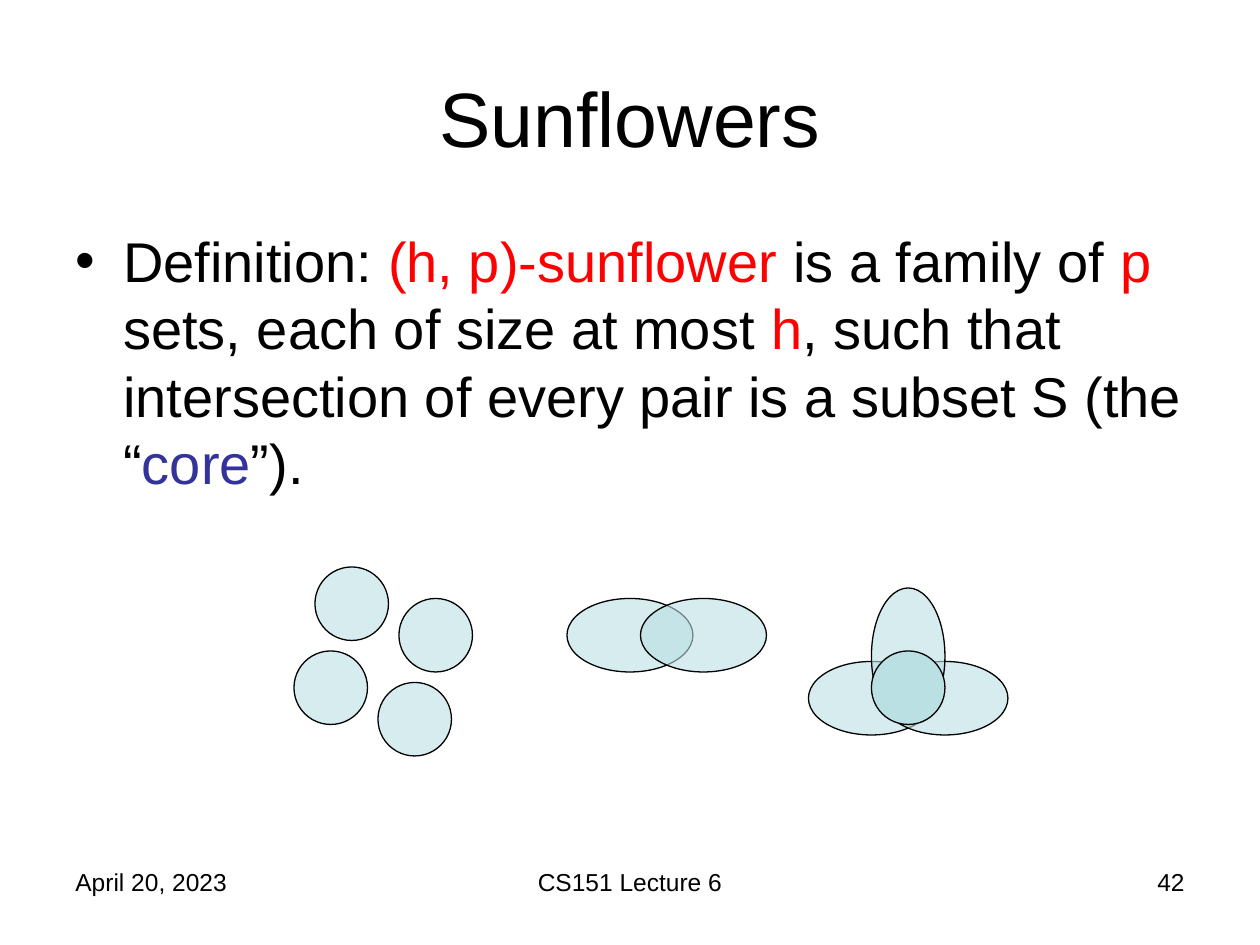
from lxml import etree
from pptx import Presentation
from pptx.dml.color import RGBColor
from pptx.enum.shapes import MSO_SHAPE
from pptx.enum.text import MSO_ANCHOR, PP_ALIGN
from pptx.oxml.ns import qn
from pptx.util import Inches, Pt

LEFT, CENTER, RIGHT = PP_ALIGN.LEFT, PP_ALIGN.CENTER, PP_ALIGN.RIGHT
TOP, MIDDLE = MSO_ANCHOR.TOP, MSO_ANCHOR.MIDDLE
OVAL = MSO_SHAPE.OVAL

# Grid of 120 columns by 90 rows, twelve to the inch
COLUMNS, ROWS = 120, 90
CELL = Inches(1) // 12
MARGIN = 6
CONTENT_WIDTH = COLUMNS - 2 * MARGIN
CIRCLE = 7
PETAL = 12

BLACK, RED, BLUE, TEAL = "000000", "FF0000", "333399", "BBE0E3"


def color(hex_string):
    return RGBColor.from_string(hex_string)


def cells(*counts):
    return [round(count * CELL) for count in counts]


def add_text(slide, box, runs, size, align=LEFT, anchor=TOP):
    """Place one paragraph of (text, colour) runs and return it."""
    text_frame = slide.shapes.add_textbox(*cells(*box)).text_frame
    text_frame.word_wrap = True
    text_frame.vertical_anchor = anchor
    paragraph = text_frame.paragraphs[0]
    paragraph.alignment = align
    for text, run_color in runs:
        run = paragraph.add_run()
        run.text = text
        run.font.name = "Arial"
        run.font.size = Pt(size)
        run.font.color.rgb = color(run_color)
    return paragraph


def add_set(slide, box, opacity=60):
    """Draw one set as an outlined ellipse."""
    ellipse = slide.shapes.add_shape(OVAL, *cells(*box))
    ellipse.shadow.inherit = False
    ellipse.fill.solid()
    ellipse.fill.fore_color.rgb = color(TEAL)
    ellipse.line.color.rgb = color(BLACK)
    ellipse.line.width = Pt(0.75)
    if opacity < 100:
        fill_color = ellipse.fill._xPr.find(qn("a:solidFill"))[0]
        etree.SubElement(fill_color, qn("a:alpha"), val=str(opacity * 1000))


def add_title(slide, box):
    add_text(slide, box, [("Sunflowers", BLACK)], 44, CENTER, MIDDLE)


def add_definition(slide, box):
    runs = [
        ("Definition: ", BLACK), ("(h, p)-sunflower", RED),
        (" is a family of ", BLACK), ("p", RED),
        (" sets, each of size at most ", BLACK), ("h", RED),
        (", such that intersection of every pair is a subset S (the “", BLACK),
        ("core", BLUE), ("”).", BLACK),
    ]
    paragraph = add_text(slide, box, runs, 32)
    paragraph.space_before = Pt(6.4)
    # Hanging bullet
    properties = paragraph._p.get_or_add_pPr()
    indent = Inches(0.38)
    properties.set("marL", str(indent))
    properties.set("indent", str(-indent))
    etree.SubElement(properties, qn("a:buFont"), typeface="Arial")
    etree.SubElement(properties, qn("a:buChar"), char="•")


def add_disjoint_sets(slide, left, top):
    for column, row in [(0, 8), (2, 0), (10, 3), (8, 11)]:
        add_set(slide, (left + column, top + row, CIRCLE, CIRCLE))


def add_overlapping_pair(slide, left, top):
    for column in (0, CIRCLE):
        add_set(slide, (left + column, top, PETAL, CIRCLE))


def add_three_petals(slide, left, top):
    add_overlapping_pair(slide, left, top + CIRCLE)
    core_left = left + (PETAL + CIRCLE - CIRCLE) / 2
    add_set(slide, (core_left, top, CIRCLE, PETAL + 1))
    add_set(slide, (core_left, top + 6, CIRCLE, CIRCLE), opacity=100)


def add_footer(slide, left, top, width, height):
    side, middle = 28, 38
    parts = [
        ("April 20, 2023", left, side, LEFT),
        ("CS151 Lecture 6", left + (width - middle) / 2, middle, CENTER),
        ("42", left + width - side, side, RIGHT),
    ]
    for text, part_left, part_width, align in parts:
        box = (part_left, top, part_width, height)
        add_text(slide, box, [(text, BLACK)], 14, align)


def main():
    presentation = Presentation()
    presentation.slide_width, presentation.slide_height = cells(COLUMNS, ROWS)
    slide = presentation.slides.add_slide(presentation.slide_layouts[6])

    add_title(slide, (MARGIN, 3.6, CONTENT_WIDTH, 15))
    add_definition(slide, (MARGIN, 21, CONTENT_WIDTH, 59.4))
    # Three example sunflowers
    add_three_petals(slide, 77, 56)
    add_overlapping_pair(slide, 54, 57)
    add_disjoint_sets(slide, 28, 54)
    add_footer(slide, MARGIN, 82, CONTENT_WIDTH, 6.25)

    presentation.save("out.pptx")


if __name__ == "__main__":
    main()
